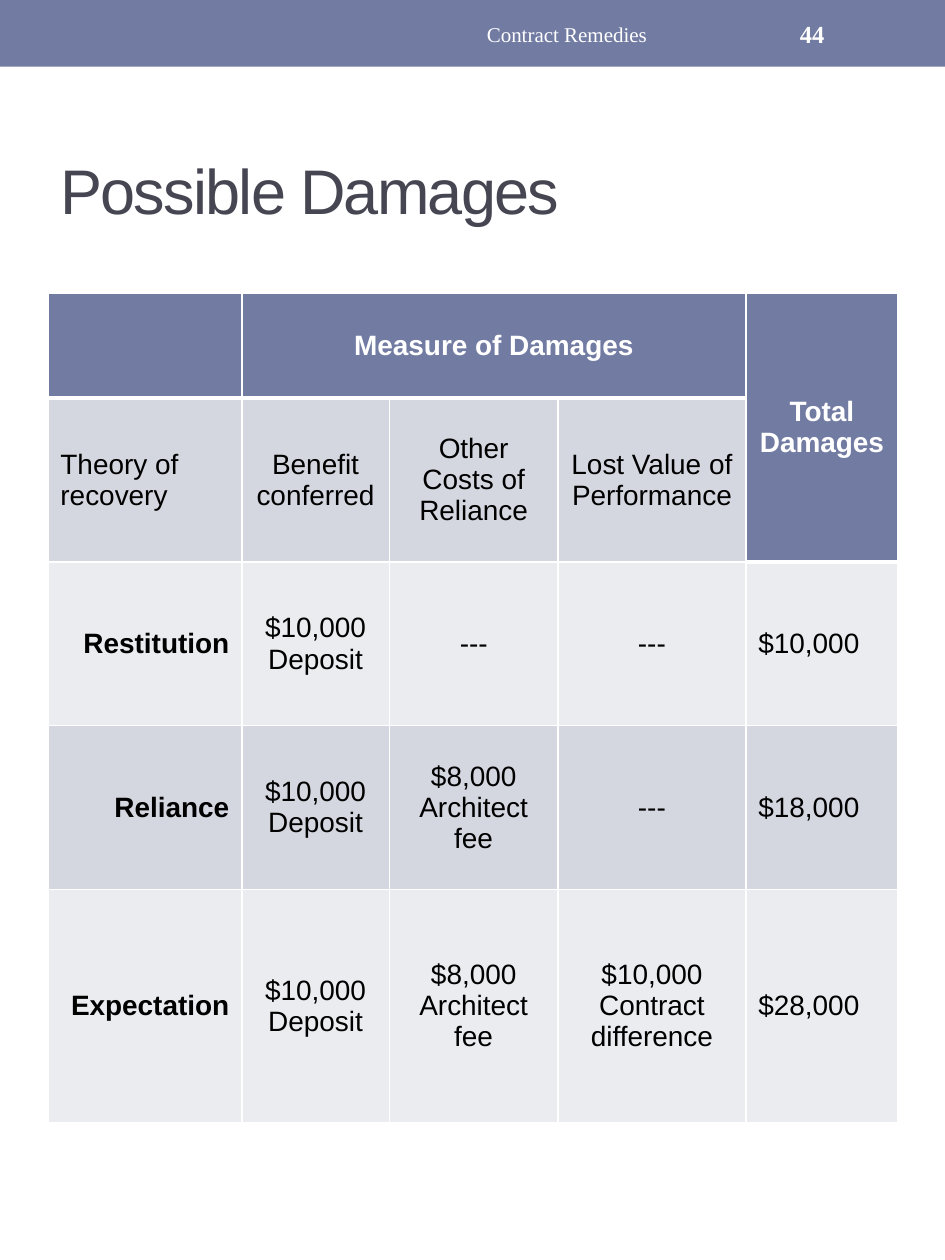
import pptx
import pptx.util
import pptx.dml.color
import pptx.enum.shapes
import pptx.enum.text
from dataclasses import dataclass
from lxml import etree
from pptx.util import Inches


@dataclass(frozen=True)
class Theme:
    slate: str = "727CA3"
    title_ink: str = "464653"
    band_dark: str = "D5D7E0"
    band_light: str = "EBECF0"
    white: str = "FFFFFF"
    black: str = "000000"
    sans: str = "Arial"
    serif: str = "Times New Roman"
    title_size: int = 36
    table_size: int = 16
    header_size: int = 12
    number_size: int = 14
    thin: int = 1
    thick: int = 3


theme = Theme()
color = pptx.dml.color.RGBColor.from_string
ALIGN = pptx.enum.text.PP_ALIGN
MIDDLE = pptx.enum.text.MSO_ANCHOR.MIDDLE


def write(frame, text, *, size, ink, font=theme.sans, bold=False, align=ALIGN.LEFT, spacing=None):
    """Write text into a frame; each newline becomes a line break."""
    frame.word_wrap = True
    frame.vertical_anchor = MIDDLE
    paragraph = frame.paragraphs[0]
    paragraph.alignment = align
    for number, line in enumerate(text.split("\n")):
        if number:
            paragraph.add_line_break()
        run = paragraph.add_run()
        run.text = line
        run.font.name = font
        run.font.size = pptx.util.Pt(size)
        run.font.bold = bold
        run.font.color.rgb = color(ink)
        if spacing is not None:
            run.font._element.set("spc", str(spacing * 100))


def set_borders(cell, widths):
    """Draw white cell borders; widths gives points for L, R, T and B."""
    properties = cell._tc.get_or_add_tcPr()
    for index, (side, width) in enumerate(widths.items()):
        border = pptx.oxml.parse_xml(
            f'<a:ln{side} xmlns:a="http://schemas.openxmlformats.org/drawingml/2006/main" '
            f'w="{pptx.util.Pt(width)}"><a:solidFill><a:srgbClr val="{theme.white}"/>'
            f'</a:solidFill></a:ln{side}>')
        properties.insert(index, border)


deck = pptx.Presentation()
deck.slide_width, deck.slide_height = Inches(7.5), Inches(10)
slide = deck.slides.add_slide(deck.slide_layouts[6])

# Top band
band = slide.shapes.add_shape(
    pptx.enum.shapes.MSO_SHAPE.RECTANGLE, 0, 0, deck.slide_width, Inches(0.53))
band.shadow.inherit = False
band.fill.solid()
band.fill.fore_color.rgb = color(theme.slate)
band.line.fill.background()

# Title, running header and page number
headings = [
    ("Possible Damages", (0.38, 0.78, 6.75, 1.44),
     dict(size=theme.title_size, ink=theme.title_ink, spacing=-1)),
    ("Contract Remedies", (2.81, 0.03, 3.38, 0.48),
     dict(size=theme.header_size, ink=theme.white, font=theme.serif, align=ALIGN.CENTER)),
    ("44", (6.25, 0.03, 0.88, 0.48),
     dict(size=theme.number_size, ink=theme.white, font=theme.serif, bold=True)),
]
for text, place, style in headings:
    heading = slide.shapes.add_textbox(*map(Inches, place))
    write(heading.text_frame, text, **style)

# Damages table
deposit = "$10,000\nDeposit"
architect = "$8,000\nArchitect fee"
none = "---"
rows = [
    ["", "Measure of Damages", "", "", "Total Damages"],
    ["Theory of recovery", "Benefit conferred", "Other Costs of Reliance",
     "Lost Value of Performance", ""],
    ["Restitution", deposit, none, none, "$10,000"],
    ["Reliance", deposit, architect, none, "$18,000"],
    ["Expectation", deposit, architect, "$10,000\nContract difference", "$28,000"],
]
column_widths = [1.54, 1.17, 1.34, 1.49, 1.21]
row_heights = [0.83, 1.3, 1.3, 1.3, 1.85]
total_column = len(column_widths) - 1

damages = slide.shapes.add_table(
    len(rows), len(column_widths), Inches(0.38), Inches(2.33),
    Inches(sum(column_widths)), Inches(sum(row_heights))).table
for column, width in zip(damages.columns, column_widths):
    column.width = Inches(width)
for row, height in zip(damages.rows, row_heights):
    row.height = Inches(height)
damages.cell(0, 1).merge(damages.cell(0, 3))
damages.cell(0, total_column).merge(damages.cell(1, total_column))

for r, texts in enumerate(rows):
    for c, text in enumerate(texts):
        cell = damages.cell(r, c)
        is_header = r == 0 or (r == 1 and c == total_column)
        below_header = r == (2 if c == total_column else 1)
        is_theory = c == 0 and r > 1

        # Header colour, then alternating bands
        stripe = theme.band_dark if r % 2 else theme.band_light
        cell.fill.solid()
        cell.fill.fore_color.rgb = color(theme.slate if is_header else stripe)
        set_borders(cell, {
            "L": theme.thin,
            "R": theme.thin,
            "T": theme.thick if below_header else theme.thin,
            "B": theme.thick if is_header else theme.thin,
        })

        # Theories sit right, totals left, the rest centred
        cell.vertical_anchor = MIDDLE
        if text:
            if is_theory:
                align = ALIGN.RIGHT
            elif not is_header and c in (0, total_column):
                align = ALIGN.LEFT
            else:
                align = ALIGN.CENTER
            write(cell.text_frame, text, size=theme.table_size, align=align,
                  ink=theme.white if is_header else theme.black,
                  bold=is_header or is_theory)
            cell.vertical_anchor = MIDDLE

deck.save("out.pptx")
